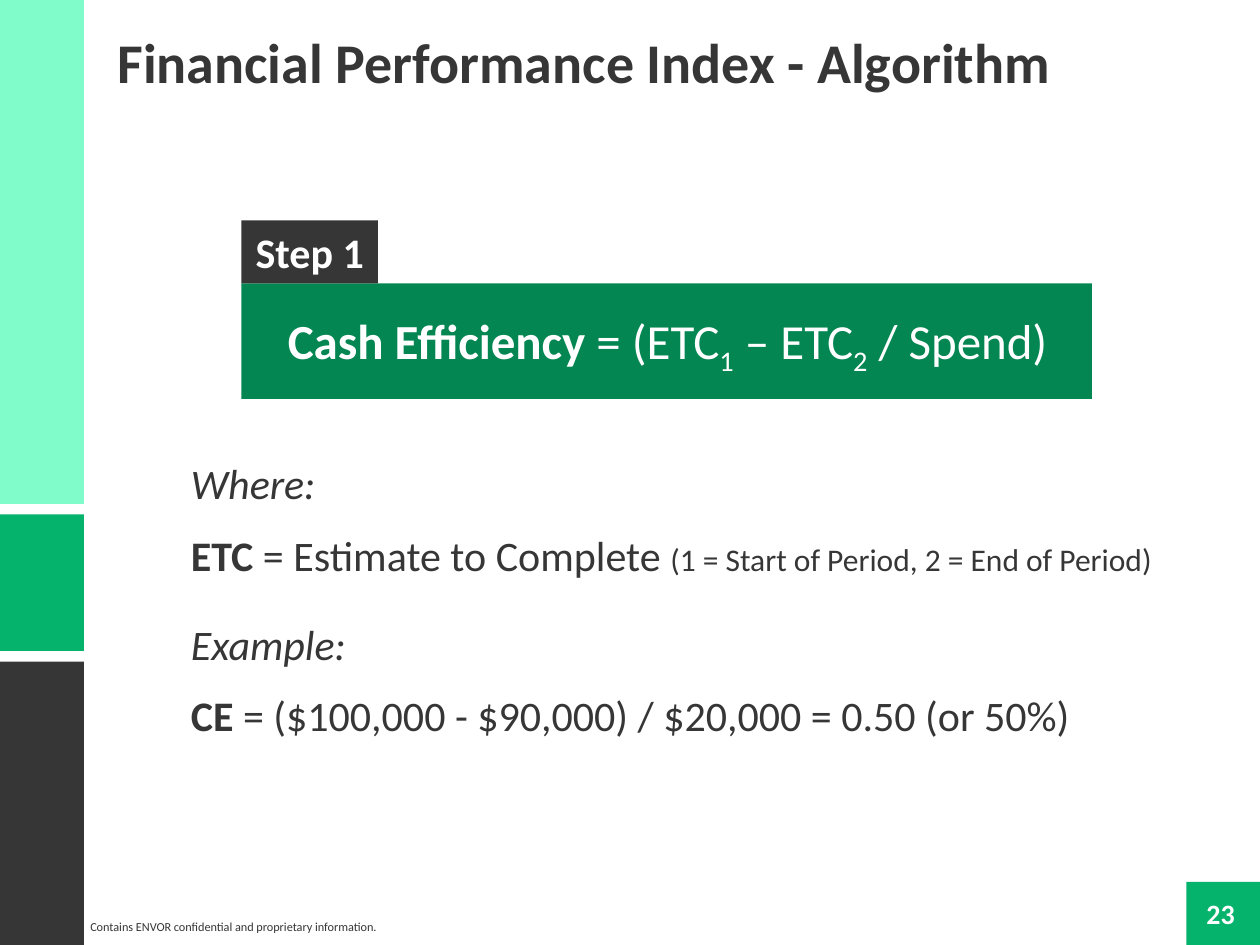
from pptx import Presentation
from pptx.dml.color import RGBColor
from pptx.enum.shapes import MSO_SHAPE
from pptx.enum.text import MSO_ANCHOR, PP_ALIGN
from pptx.util import Pt

DARK, GREEN, DEEP_GREEN, MINT, WHITE = "363636", "05B36D", "048652", "80FBCA", "FFFFFF"


def add_block(left, top, width, height, color):
    shape = slide.shapes.add_shape(MSO_SHAPE.RECTANGLE, Pt(left), Pt(top), Pt(width), Pt(height))
    shape.shadow.inherit = False
    shape.fill.solid()
    shape.fill.fore_color.rgb = RGBColor.from_string(color)
    shape.line.fill.background()
    return shape


def write(shape, lines, size, color, align=PP_ALIGN.LEFT, margin=7.2):
    frame = shape.text_frame
    frame.word_wrap = True
    frame.margin_left = frame.margin_right = Pt(margin)
    for index, runs in enumerate(lines):
        paragraph = frame.paragraphs[0] if index == 0 else frame.add_paragraph()
        paragraph.alignment = align
        paragraph.font.name = "Calibri"
        paragraph.font.size = Pt(size)
        paragraph.font.color.rgb = RGBColor.from_string(color)
        for text, style in runs:
            run = paragraph.add_run()
            run.text = text
            if style == "bold":
                run.font.bold = True
            elif style == "italic":
                run.font.italic = True
            elif style == "small":
                run.font.size = Pt(18)
            elif style == "subscript":
                run.font._element.set("baseline", "-25000")
    return frame


presentation = Presentation()
presentation.slide_width = Pt(720)
presentation.slide_height = Pt(540)
slide = presentation.slides.add_slide(presentation.slide_layouts[6])

for top, height, color in [(378, 162, DARK), (294, 78, GREEN), (0, 288, MINT)]:
    add_block(0, top, 48, height, color)
add_block(678, 504, 42, 36, GREEN)

footer = slide.shapes.add_textbox(Pt(51.6), Pt(522), Pt(176.4), Pt(15.8))
write(footer, [[("Contains ENVOR confidential and proprietary information.", "plain")]], 7, DARK, margin=0)

number = slide.shapes.add_textbox(Pt(678), Pt(509), Pt(39), Pt(26.6))
write(number, [[("23", "bold")]], 16, WHITE, PP_ALIGN.CENTER, 0)

title = slide.shapes.add_textbox(Pt(60), Pt(12), Pt(648), Pt(46))
write(title, [[("Financial Performance Index - Algorithm", "bold")]], 32, DARK)

explanation = slide.shapes.add_textbox(Pt(102), Pt(258), Pt(570), Pt(170))
frame = write(explanation, [
    [("Where:", "italic")],
    [("ETC", "bold"), (" = Estimate to Complete ", "plain"),
     ("(1 = Start of Period, 2 = End of Period)", "small")],
    [("Example:", "italic")],
    [("CE", "bold"), (" = ($100,000 - $90,000) / $20,000 = 0.50 (or 50%)", "plain")],
], 24, DARK)
for heading in frame.paragraphs[::2]:
    heading.space_after = Pt(12)
frame.paragraphs[2].space_before = Pt(22)

add_block(138, 162, 486, 66, DEEP_GREEN)
formula = slide.shapes.add_textbox(Pt(150), Pt(174), Pt(463), Pt(41))
frame = write(formula, [[
    ("Cash Efficiency ", "bold"), ("= (ETC", "plain"), ("1", "subscript"),
    (" – ETC", "plain"), ("2", "subscript"), (" / Spend)", "plain"),
]], 28, WHITE, PP_ALIGN.CENTER)
frame.word_wrap = False

step = add_block(138, 126, 78, 36, DARK)
frame = write(step, [[("Step 1", "bold")]], 24, WHITE, PP_ALIGN.CENTER)
frame.vertical_anchor = MSO_ANCHOR.TOP

presentation.save("out.pptx")
